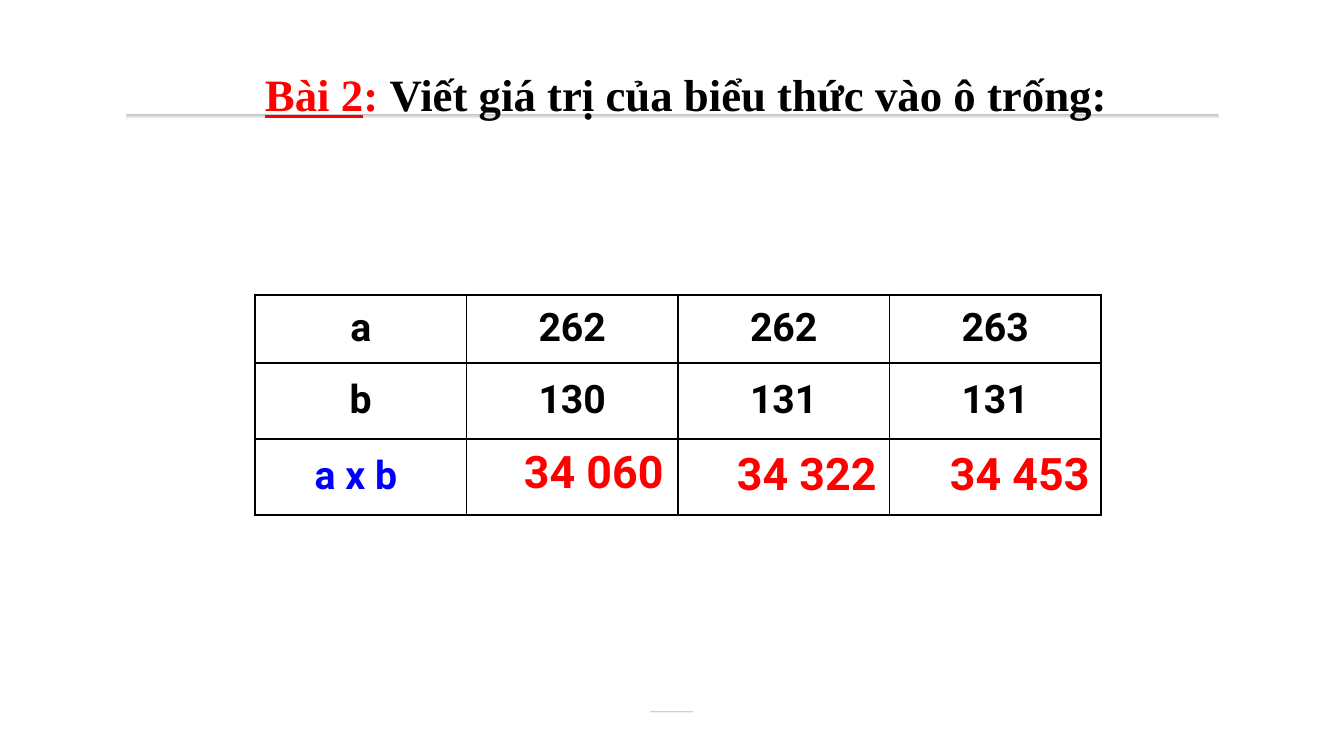
import pptx
import pptx.dml.color
import pptx.enum.shapes
import pptx.enum.text
import pptx.oxml
import pptx.oxml.ns
import pptx.util

RGBColor = pptx.dml.color.RGBColor
BLACK = RGBColor(0x00, 0x00, 0x00)
WHITE = RGBColor(0xFF, 0xFF, 0xFF)
RED = RGBColor(0xFF, 0x00, 0x00)
BLUE = RGBColor(0x00, 0x00, 0xFF)
GREY = RGBColor(0xBF, 0xBF, 0xBF)

SERIF = "Times New Roman"
SANS = "Roboto"
THIN, THICK = 1, 2.25

ROWS = [["a", "262", "262", "263"],
        ["b", "130", "131", "131"],
        ["a x b ", "", "", ""]]
ROW_HEIGHTS = [68, 76, 76]
RESULTS = [("34 060", 439), ("34 322", 441), ("34 453", 441)]


def px(n):
    return pptx.util.Emu(round(n * 914400 / 100.8))


def add_run(p, text, font, size, color, underline=False):
    r = p.add_run()
    r.text = text
    r.font.name = font
    r.font.size = pptx.util.Pt(size)
    r.font.bold = True
    r.font.underline = underline
    r.font.color.rgb = color


def add_bar(s, x, y, w, h):
    """Rounded bar that fades from grey at the top to white."""
    sp = s.shapes.add_shape(pptx.enum.shapes.MSO_SHAPE.ROUNDED_RECTANGLE,
                            px(x), px(y), px(w), px(h))
    sp.adjustments[0] = 0.5
    sp.shadow.inherit = False
    sp.line.fill.background()
    sp.fill.gradient()
    sp.fill.gradient_angle = 270
    for stop, color in zip(sp.fill.gradient_stops, (GREY, WHITE)):
        stop.color.rgb = color


def add_text(s, x, y, w, h, runs):
    tf = s.shapes.add_textbox(px(x), px(y), px(w), px(h)).text_frame
    tf.word_wrap = True
    tf.auto_size = pptx.enum.text.MSO_AUTO_SIZE.SHAPE_TO_FIT_TEXT
    p = tf.paragraphs[0]
    p.space_before = pptx.util.Pt(3)
    for run in runs:
        add_run(p, *run)


def set_borders(cell, widths):
    """Draw black borders; widths are points for left, right, top, bottom."""
    tc_pr = cell._tc.get_or_add_tcPr()
    for side, width in zip("LRTB", widths):
        tc_pr.append(pptx.oxml.parse_xml(
            f'<a:ln{side} {pptx.oxml.ns.nsdecls("a")} w="{pptx.util.Pt(width)}">'
            f'<a:solidFill><a:srgbClr val="{BLACK}"/></a:solidFill></a:ln{side}>'))


def fill_cell(cell, text, color):
    cell.fill.solid()
    cell.fill.fore_color.rgb = WHITE
    cell.vertical_anchor = pptx.enum.text.MSO_ANCHOR.MIDDLE
    cell.margin_left = cell.margin_right = px(8)
    cell.margin_top = cell.margin_bottom = px(4)
    if text:
        p = cell.text_frame.paragraphs[0]
        p.alignment = pptx.enum.text.PP_ALIGN.CENTER
        p.line_spacing = 0.9
        p.space_before = pptx.util.Pt(10)
        add_run(p, text, SANS, 28, color)


def add_value_table(s, x, y, w):
    last_row, last_col = len(ROWS) - 1, len(ROWS[0]) - 1
    table = s.shapes.add_table(len(ROWS), len(ROWS[0]), px(x), px(y),
                               px(w), px(sum(ROW_HEIGHTS))).table
    table.first_row = table.horz_banding = False
    for i, row in enumerate(ROWS):
        table.rows[i].height = px(ROW_HEIGHTS[i])
        for j, text in enumerate(row):
            cell = table.cell(i, j)
            outer = (j == 0, j == last_col, i == 0, i == last_row)
            set_borders(cell, [THICK if edge else THIN for edge in outer])
            fill_cell(cell, text, BLUE if i == last_row else BLACK)


def main():
    prs = pptx.Presentation()
    prs.slide_width, prs.slide_height = px(1344), px(756)
    s = prs.slides.add_slide(prs.slide_layouts[6])

    add_bar(s, 126, 114, 1093, 5)
    add_bar(s, 650, 711, 43, 2)
    add_text(s, 255, 62, 984, 64, [
        ("Bài 2", SERIF, 32, RED, True),
        (": ", SERIF, 32, RED),
        ("Viết giá trị của biểu thức vào ô trống:", SERIF, 32, BLACK)])
    add_value_table(s, 255, 295, 846)
    for i, (value, top) in enumerate(RESULTS):
        add_text(s, 514 + 213 * i, top, 219, 64, [(value, SANS, 32, RED)])

    prs.save("out.pptx")


if __name__ == "__main__":
    main()
